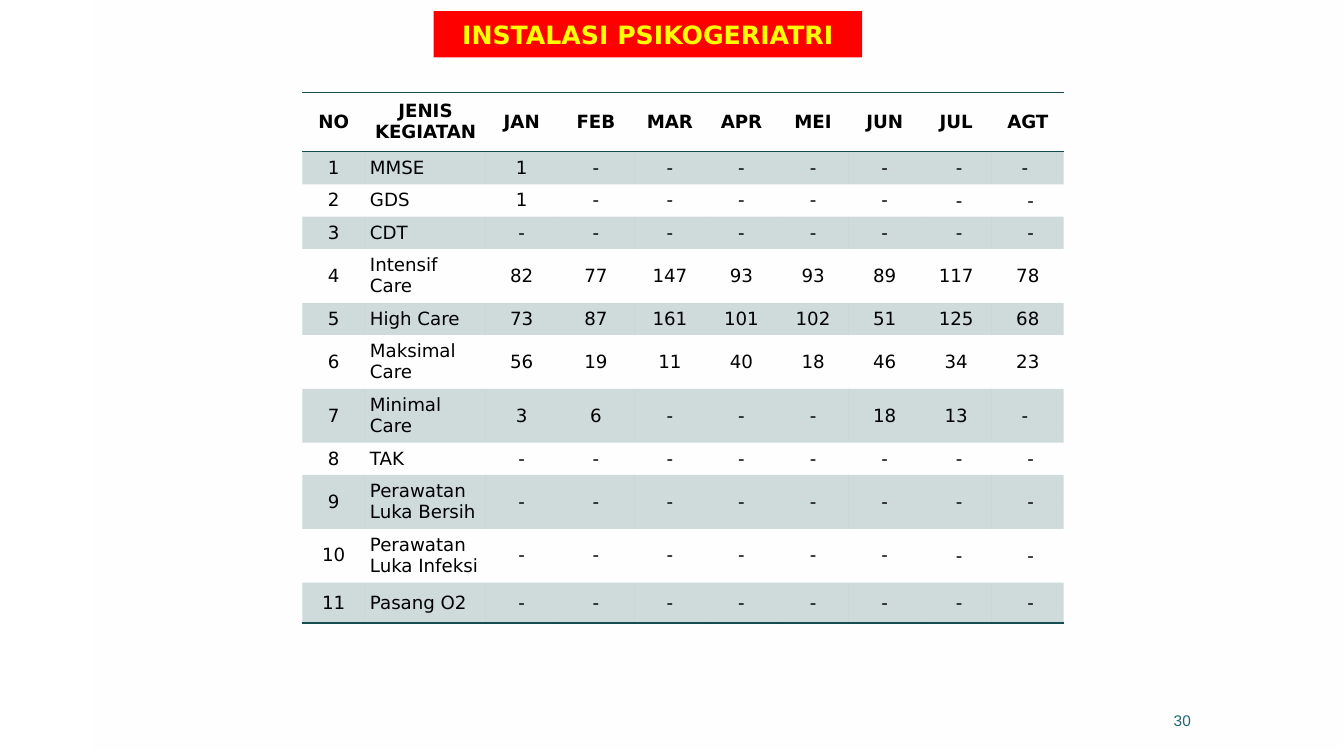
from dataclasses import dataclass
from typing import Any

from lxml.etree import SubElement
from pptx import Presentation
from pptx.dml.color import RGBColor
from pptx.enum.shapes import MSO_SHAPE
from pptx.enum.text import MSO_ANCHOR, MSO_AUTO_SIZE, PP_ALIGN
from pptx.oxml import parse_xml
from pptx.oxml.ns import nsdecls, qn
from pptx.util import Inches, Pt

TEAL = "164B4F"
NO_STYLE = "{2D5ABB26-0587-4C30-8999-92F81FD0307C}"
HEADINGS = ["NO", "JENIS KEGIATAN", "JAN", "FEB", "MAR", "APR", "MEI", "JUN", "JUL", "AGT"]
COLUMN_WIDTHS = [0.62, 1.2, 0.71, 0.76] + [0.71] * 6
ROW_HEIGHTS = [0.58, 0.33, 0.32, 0.32, 0.46, 0.32, 0.52, 0.27, 0.32, 0.41, 0.39, 0.4]


@dataclass(frozen=True)
class Activity:
    name: str
    months: str = "-,-,-,-,-,-, -, -"


@dataclass(frozen=True)
class TextStyle:
    size: float
    color: str
    name: str = "DejaVu Sans"
    bold: bool = False
    alignment: Any = PP_ALIGN.CENTER


ACTIVITIES = [
    Activity("MMSE", "1,-,-,-,-,-, -,- "),
    Activity("GDS", "1,-,-,-,-,-, -, -"),
    Activity("CDT"),
    Activity("Intensif Care", "82,77,147,93,93,89,117,78"),
    Activity("High Care", "73,87,161,101,102,51,125,68"),
    Activity("Maksimal Care", "56,19,11,40,18,46,34,23"),
    Activity("Minimal Care", "3,6,-,-,-,18,13,- "),
    Activity("TAK"),
    Activity("Perawatan Luka Bersih"),
    Activity("Perawatan Luka Infeksi"),
    Activity("Pasang O2"),
]
TITLE_STYLE = TextStyle(18, "FFFF00", bold=True)
HEADING_STYLE = TextStyle(13, "000000", bold=True)
VALUE_STYLE = TextStyle(13, "000000")
NAME_STYLE = TextStyle(13, "000000", alignment=PP_ALIGN.LEFT)
NUMBER_STYLE = TextStyle(11, "1F696F", name="Arial", alignment=PP_ALIGN.RIGHT)


def rgb(color: str) -> RGBColor:
    return RGBColor.from_string(color)


def set_all(target: Any, values: dict[str, Any]) -> None:
    for name, value in values.items():
        setattr(target, name, value)


def place(shape: Any, left: float, top: float, width: float, height: float) -> None:
    box = {"left": left, "top": top, "width": width, "height": height}
    set_all(shape, {name: Inches(length) for name, length in box.items()})


def write(text_frame: Any, text: str, style: TextStyle) -> None:
    text_frame.text = text
    paragraph = text_frame.paragraphs[0]
    paragraph.alignment = style.alignment
    font = paragraph.runs[0].font
    set_all(font, {"size": Pt(style.size), "name": style.name, "bold": style.bold})
    font.color.rgb = rgb(style.color)


def set_alpha(color_element: Any, percent: int) -> None:
    SubElement(color_element, qn("a:alpha")).set("val", str(percent * 1000))


def add_backdrop(slide: Any) -> None:
    shape = slide.shapes.add_shape(MSO_SHAPE.RECTANGLE, 0, 0, 0, 0)
    place(shape, 0.91, 0, 12.41, 7.5)
    shape.shadow.inherit = False
    shape.line.fill.background()
    shape.fill.gradient()
    shape.fill.gradient_angle = 270
    for stop, percent in zip(shape.fill.gradient_stops, (60, 0)):
        stop.color.rgb = rgb("FFFFFF")
    for color_element, percent in zip(shape.element.spPr.iter(qn("a:srgbClr")), (60, 0)):
        set_alpha(color_element, percent)


def add_slide_number(slide: Any, text: str) -> None:
    shape = slide.shapes.add_textbox(0, 0, 0, 0)
    place(shape, 8.8, 6.95, 3.11, 0.4)
    set_all(shape.text_frame, {"word_wrap": True, "vertical_anchor": MSO_ANCHOR.MIDDLE})
    write(shape.text_frame, text, NUMBER_STYLE)


def add_border(cell: Any, side: str, position: int) -> None:
    line = parse_xml(
        f'<a:{side} {nsdecls("a")} w="12700"><a:solidFill>'
        f'<a:srgbClr val="{TEAL}"/></a:solidFill></a:{side}>'
    )
    cell._tc.get_or_add_tcPr().insert(position, line)


def format_cell(cell: Any, row: int, column: int) -> None:
    narrow = row > 0 and column >= 8
    side_margin = Inches(0.01 if narrow else 0.05)
    set_all(cell, {
        "vertical_anchor": MSO_ANCHOR.MIDDLE,
        "margin_left": side_margin,
        "margin_right": side_margin,
        "margin_top": side_margin,
        "margin_bottom": Inches(0 if narrow else 0.05),
    })
    if row % 2:
        cell.fill.solid()
        cell.fill.fore_color.rgb = rgb(TEAL)
        set_alpha(next(cell._tc.tcPr.iter(qn("a:srgbClr"))), 20)
    else:
        cell.fill.background()
    if row == 0:
        add_border(cell, "lnT", 0)
        add_border(cell, "lnB", 1)
    elif row == len(ACTIVITIES):
        add_border(cell, "lnB", 0)


def add_activity_table(slide: Any) -> None:
    rows = [HEADINGS]
    for number, activity in enumerate(ACTIVITIES, start=1):
        rows.append([str(number), activity.name, *activity.months.split(",")])
    frame = slide.shapes.add_table(
        len(rows), len(HEADINGS), Inches(3), Inches(0.92),
        Inches(sum(COLUMN_WIDTHS)), Inches(sum(ROW_HEIGHTS)),
    )
    table = frame.table
    set_all(table, {"first_row": False, "horz_banding": False})
    table._tbl.tblPr.find(qn("a:tableStyleId")).text = NO_STYLE
    for column, width in zip(table.columns, COLUMN_WIDTHS):
        column.width = Inches(width)
    for row, height in zip(table.rows, ROW_HEIGHTS):
        row.height = Inches(height)
    for row, texts in enumerate(rows):
        for column, text in enumerate(texts):
            cell = table.cell(row, column)
            body_style = NAME_STYLE if column == 1 else VALUE_STYLE
            write(cell.text_frame, text, body_style if row else HEADING_STYLE)
            format_cell(cell, row, column)


def add_title(slide: Any, text: str) -> None:
    title = slide.shapes.title
    place(title, 4.3, 0.11, 4.25, 0.46)
    geometry = parse_xml(
        f'<a:prstGeom {nsdecls("a")} prst="roundRect"><a:avLst/></a:prstGeom>'
    )
    title.element.spPr.insert(1, geometry)
    title.fill.solid()
    title.fill.fore_color.rgb = rgb("FF0000")
    set_all(title.text_frame, {
        "word_wrap": True,
        "auto_size": MSO_AUTO_SIZE.NONE,
        "vertical_anchor": MSO_ANCHOR.MIDDLE,
    })
    write(title.text_frame, text, TITLE_STYLE)
    slide.shapes.element.append(title.element)


def main() -> None:
    presentation = Presentation()
    set_all(presentation, {"slide_width": Inches(13.33), "slide_height": Inches(7.5)})
    slide = presentation.slides.add_slide(presentation.slide_layouts[5])
    slide.background.fill.solid()
    slide.background.fill.fore_color.rgb = rgb("FFFFFF")
    add_backdrop(slide)
    add_slide_number(slide, "30")
    add_activity_table(slide)
    add_title(slide, "INSTALASI PSIKOGERIATRI")
    presentation.save("out.pptx")


if __name__ == "__main__":
    main()
